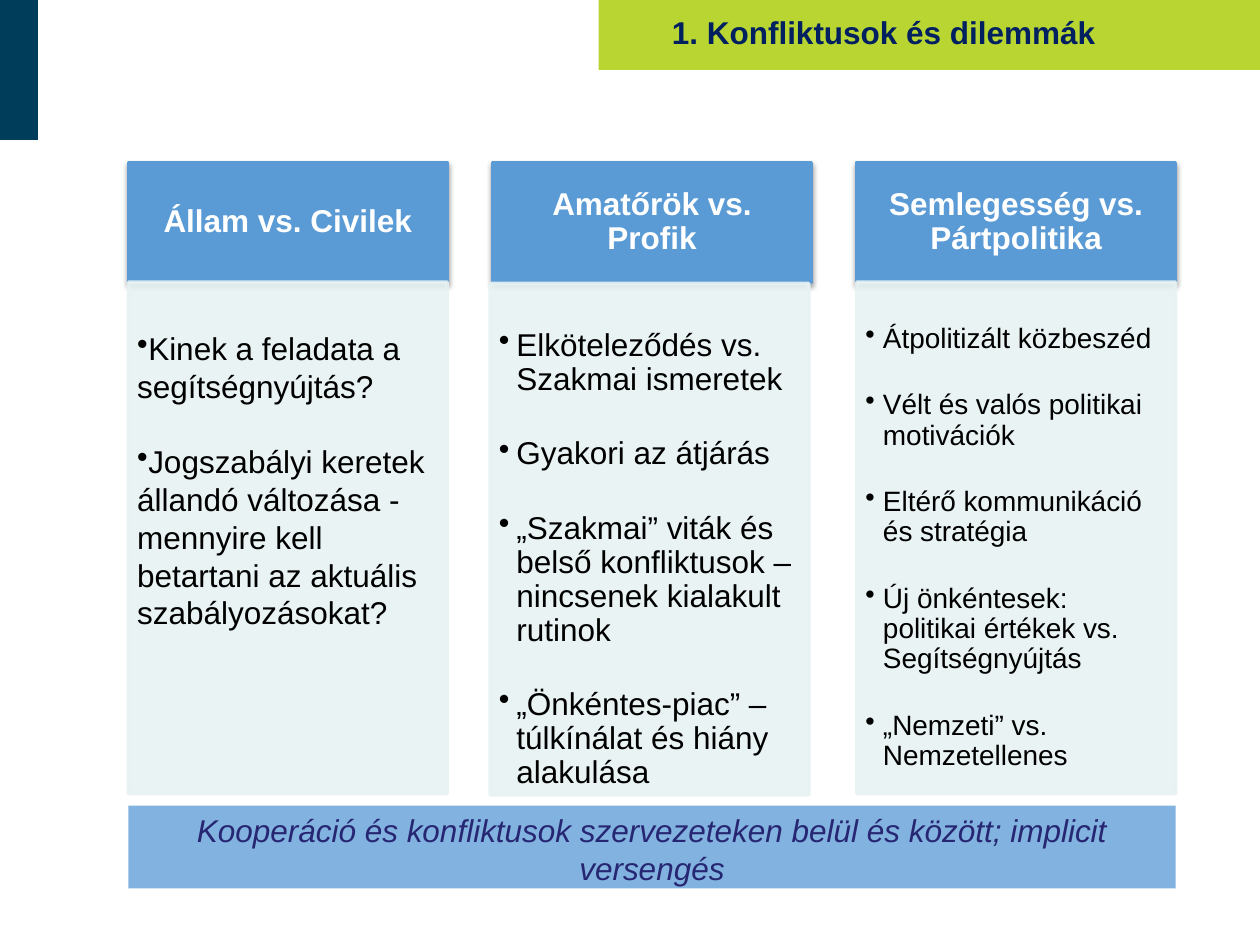
from lxml.etree import SubElement
from pptx import Presentation
from pptx.dml.color import RGBColor
from pptx.enum.shapes import MSO_SHAPE as Shape
from pptx.enum.text import MSO_ANCHOR as Anchor, PP_ALIGN as Align
from pptx.oxml.ns import qn
from pptx.util import Pt

# Content
TITLE = "1. Konfliktusok és dilemmák"
COLUMNS = [
    dict(head="Állam vs. Civilek", size=18, hang=0, spacing=1, top=26.6, gap=21.6, nudge=(0, 0),
         points=["Kinek a feladata a segítségnyújtás?",
                 "Jogszabályi keretek állandó változása - mennyire kell betartani "
                 "az aktuális szabályozásokat?"]),
    dict(head="Amatőrök vs. Profik", size=18, hang=10, spacing=0.9, top=26.2, gap=23,
         nudge=(-1.4, 0.7),
         points=["Elköteleződés vs. Szakmai ismeretek",
                 "Gyakori az átjárás",
                 "„Szakmai” viták és belső konfliktusok – nincsenek kialakult rutinok",
                 "„Önkéntes-piac” – túlkínálat és hiány alakulása"]),
    dict(head="Semlegesség vs. Pártpolitika", size=16, hang=10, spacing=0.9, top=23.9, gap=20.8,
         nudge=(0, 0),
         points=["Átpolitizált közbeszéd",
                 "Vélt és valós politikai motivációk",
                 "Eltérő kommunikáció és stratégia",
                 "Új önkéntesek: politikai értékek vs. Segítségnyújtás",
                 "„Nemzeti” vs. Nemzetellenes"]),
]
SUMMARY = "Kooperáció és konfliktusok szervezeteken belül és között; implicit versengés"

# Layout and colours
LEFT, PITCH, WIDTH = 73.4, 208.1, 182.2
HEAD_TOP, HEAD_HEIGHT, BODY_HEIGHT = 92.9, 68.4, 292.3
LIME, NAVY, BLUE, PALE = "B9D531", "003D5B", "5B9BD5", "E7F2F3"


def color(value):
    return RGBColor.from_string(value)


def add_box(slide, left, top, width, height, fill, line=False, opacity=100):
    box = slide.shapes.add_shape(Shape.RECTANGLE, Pt(left), Pt(top), Pt(width), Pt(height))
    box.shadow.inherit = False
    box.fill.solid()
    box.fill.fore_color.rgb = color(fill)
    if line:
        box.line.color.rgb = color(fill)
        box.line.width = Pt(2)
    else:
        box.line.fill.background()
    if opacity < 100:
        for shade in box.element.spPr.iter(qn("a:srgbClr")):
            SubElement(shade, qn("a:alpha"), val=str(opacity * 1000))
    return box


def add_shadow(box):
    effects = box.element.spPr.find(qn("a:effectLst"))
    shadow = SubElement(effects, qn("a:outerShdw"), blurRad=str(Pt(3.1)), dist=str(Pt(1.6)),
                        dir="5400000", rotWithShape="0")
    shade = SubElement(shadow, qn("a:srgbClr"), val="000000")
    SubElement(shade, qn("a:alpha"), val="38000")


def add_bullet(para, hang):
    props = para._p.get_or_add_pPr()
    props.set("marL", str(Pt(hang)))
    props.set("indent", str(-Pt(hang)))
    SubElement(SubElement(props, qn("a:buClr")), qn("a:srgbClr"), val="000000")
    SubElement(props, qn("a:buChar"), char="•")


def write(box, *texts, size=18, ink="000000", bold=False, italic=False, align=Align.CENTER,
          anchor=Anchor.MIDDLE, insets=(5, 3, 5, 3), spacing=1, gap=0, hang=None):
    frame = box.text_frame
    frame.word_wrap = True
    frame.vertical_anchor = anchor
    (frame.margin_left, frame.margin_top,
     frame.margin_right, frame.margin_bottom) = map(Pt, insets)
    for index, text in enumerate(texts):
        para = frame.add_paragraph() if index else frame.paragraphs[0]
        if hang is not None:
            add_bullet(para, hang)
        para.alignment = align
        para.line_spacing = spacing
        para.space_before = Pt(gap if index else 0)
        span = para.add_run()
        span.text = text
        font = span.font
        font.name, font.size, font.bold, font.italic = "Arial", Pt(size), bold, italic
        font.color.rgb = color(ink)


def main():
    deck = Presentation()
    deck.slide_width, deck.slide_height = Pt(720), Pt(540)
    page = deck.slides.add_slide(deck.slide_layouts[5])

    # Corner bands, with the title on top of them
    add_box(page, 342, 0, 378, 40, LIME)
    add_box(page, -0.7, 0, 22.4, 80, NAVY)
    title = page.shapes.title
    title.element.getparent().append(title.element)
    title.left, title.top, title.width, title.height = Pt(262), Pt(-14), Pt(486), Pt(67.7)
    write(title, TITLE, ink="002060", bold=True, spacing=0.9)

    # Three columns: heading over bullet list
    for index, column in enumerate(COLUMNS):
        left = LEFT + index * PITCH
        head = add_box(page, left, HEAD_TOP, WIDTH, HEAD_HEIGHT, BLUE, line=True)
        add_shadow(head)
        write(head, column["head"], ink="FFFFFF", bold=True, spacing=0.9,
              insets=(10.5, 6, 10.5, 6))
        shift, drop = column["nudge"]
        body = add_box(page, left + shift, HEAD_TOP + HEAD_HEIGHT + drop, WIDTH, BODY_HEIGHT,
                       PALE, line=True, opacity=90)
        write(body, *column["points"], size=column["size"], align=Align.LEFT, anchor=Anchor.TOP,
              insets=(5, column["top"], 6.5, 7), spacing=column["spacing"],
              gap=column["gap"], hang=column["hang"])

    # Summary band
    band = add_box(page, LEFT, 460.3, 2 * PITCH + WIDTH, 47.3, BLUE, opacity=76)
    write(band, SUMMARY, ink="262672", italic=True, anchor=Anchor.TOP)

    deck.save("out.pptx")


if __name__ == "__main__":
    main()
